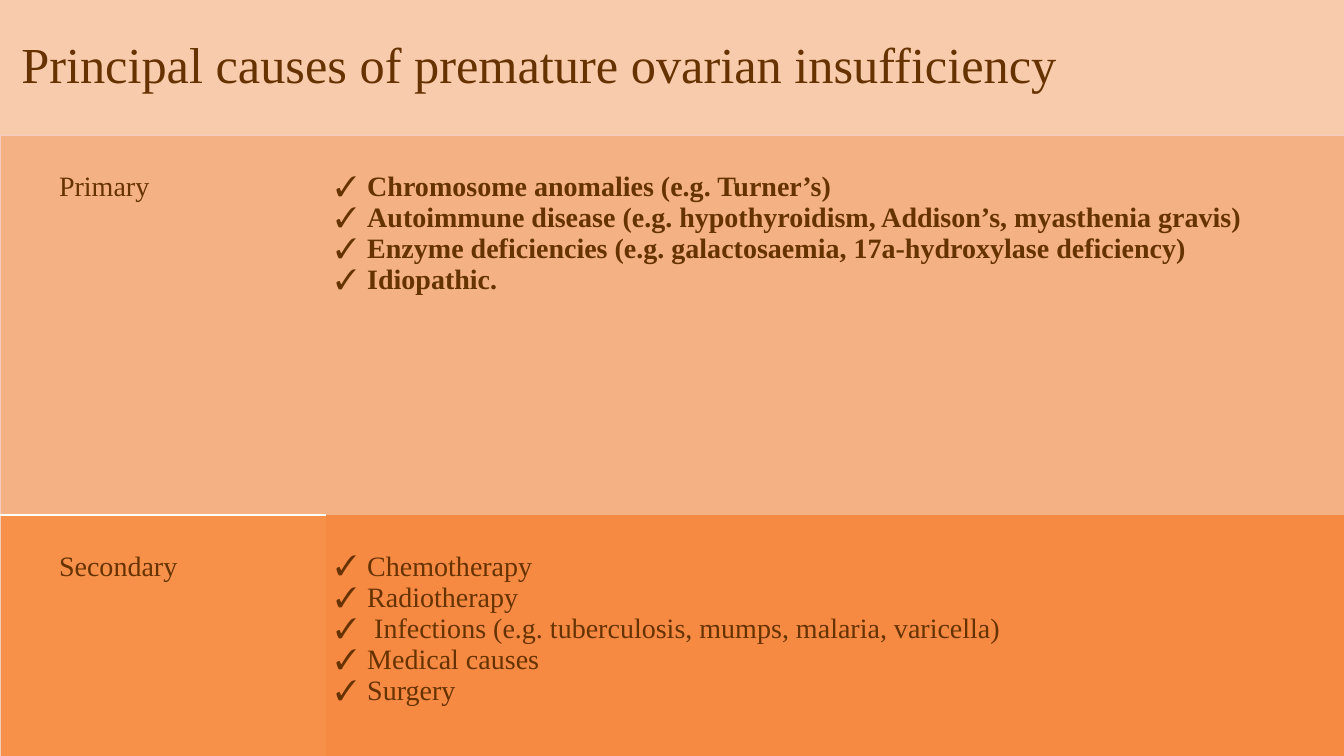
"""Build a slide with a table of the causes of premature ovarian insufficiency."""
from lxml import etree
from pptx import Presentation
from pptx.dml.color import RGBColor
from pptx.enum.text import MSO_ANCHOR, MSO_AUTO_SIZE, PP_ALIGN
from pptx.oxml.ns import qn
from pptx.util import Pt

MIDDLE, LEFT, FIXED = MSO_ANCHOR.MIDDLE, PP_ALIGN.LEFT, MSO_AUTO_SIZE.NONE

TITLE = "Principal causes of premature ovarian insufficiency"
GROUPS = [
    ("Primary", True, [
        "Chromosome anomalies (e.g. Turner’s)",
        "Autoimmune disease (e.g. hypothyroidism, Addison’s, myasthenia gravis)",
        "Enzyme deficiencies (e.g. galactosaemia, 17a-hydroxylase deficiency)",
        "Idiopathic.",
    ]),
    ("Secondary", False, [
        "Chemotherapy",
        "Radiotherapy",
        " Infections (e.g. tuberculosis, mumps, malaria, varicella)",
        "Medical causes",
        "Surgery",
    ]),
]
COLORS = {
    "text": "663300", "head": "F8CBAD", "edge": "F6CCBE", "rule": "FFFFFF",
    "primary": "F4B183", "label": "F79049", "list": "F68A42",
}
FILLS = [("primary", "primary"), ("label", "list")]
THIN, RULE = ("edge", 0.5), ("rule", 1.5)
EDGES = [
    [{"L": THIN, "T": THIN, "B": RULE}, {"T": THIN, "R": THIN}],
    [{"L": THIN, "T": RULE, "B": THIN}, {"R": THIN, "B": THIN}],
]
FONT = "Times New Roman"
WIDTH, HEIGHT, HEAD = 960, 540, 96.5
COLS, ROWS = (232.6, 727.4), (271.4, 172.1)
TOP, INSET, SIDE, HANG = 25.7, 42.2, 7.2, 22.5


def rgb(name):
    return RGBColor.from_string(COLORS[name])


def style(para, size, bold=False):
    font = para.font
    font.name, font.size, font.bold = FONT, Pt(size), bold
    font.color.rgb = rgb("text")
    para.alignment = LEFT


def border(cell, edges):
    props = cell._tc.get_or_add_tcPr()
    for spot, side in enumerate("LRTB"):
        line = etree.Element(qn(f"a:ln{side}"))
        if side in edges:
            name, width = edges[side]
            line.set("w", str(Pt(width)))
            fill = etree.SubElement(line, qn("a:solidFill"))
            etree.SubElement(fill, qn("a:srgbClr"), val=COLORS[name])
        else:
            etree.SubElement(line, qn("a:noFill"))
        props.insert(spot, line)


def bullet(para):
    props = para._p.get_or_add_pPr()
    props.set("marL", str(Pt(HANG)))
    props.set("indent", str(-Pt(HANG)))
    etree.SubElement(props, qn("a:buFont")).set("typeface", "Wingdings")
    props[-1].set("typeface", FONT)
    etree.SubElement(props, qn("a:buChar"), char="✓")


def fill_cell(cell, lines, bold, ticks, left):
    cell.margin_top, cell.margin_left = Pt(TOP), Pt(left)
    frame = cell.text_frame
    frame.text = "\n".join(lines)
    for para in frame.paragraphs:
        if ticks:
            bullet(para)
        style(para, 20, bold)


def add_title(slide):
    title = slide.shapes.title
    title.left, title.top = Pt(0), Pt(0)
    title.width, title.height = Pt(WIDTH), Pt(HEAD)
    title.fill.solid()
    title.fill.fore_color.rgb = rgb("head")
    frame = title.text_frame
    frame.text = TITLE
    frame.auto_size, frame.vertical_anchor = FIXED, MIDDLE
    frame.margin_left = Pt(15.2)
    para = frame.paragraphs[0]
    para.line_spacing = 0.9
    style(para, 36)


def add_causes(slide):
    table = slide.shapes.add_table(
        len(ROWS), len(COLS), Pt(0), Pt(HEAD), Pt(WIDTH), Pt(sum(ROWS))).table
    table.first_row = table.horz_banding = False
    for col, width in zip(table.columns, COLS):
        col.width = Pt(width)
    for r, (label, bold, causes) in enumerate(GROUPS):
        table.rows[r].height = Pt(ROWS[r])
        fill_cell(table.cell(r, 0), [label], False, False, INSET)
        fill_cell(table.cell(r, 1), causes, bold, True, SIDE)
        for c, name in enumerate(FILLS[r]):
            cell = table.cell(r, c)
            cell.fill.solid()
            cell.fill.fore_color.rgb = rgb(name)
            border(cell, EDGES[r][c])


def main():
    deck = Presentation()
    deck.slide_width, deck.slide_height = Pt(WIDTH), Pt(HEIGHT)
    slide = deck.slides.add_slide(deck.slide_layouts[5])
    add_title(slide)
    add_causes(slide)
    deck.save("out.pptx")


if __name__ == "__main__":
    main()
